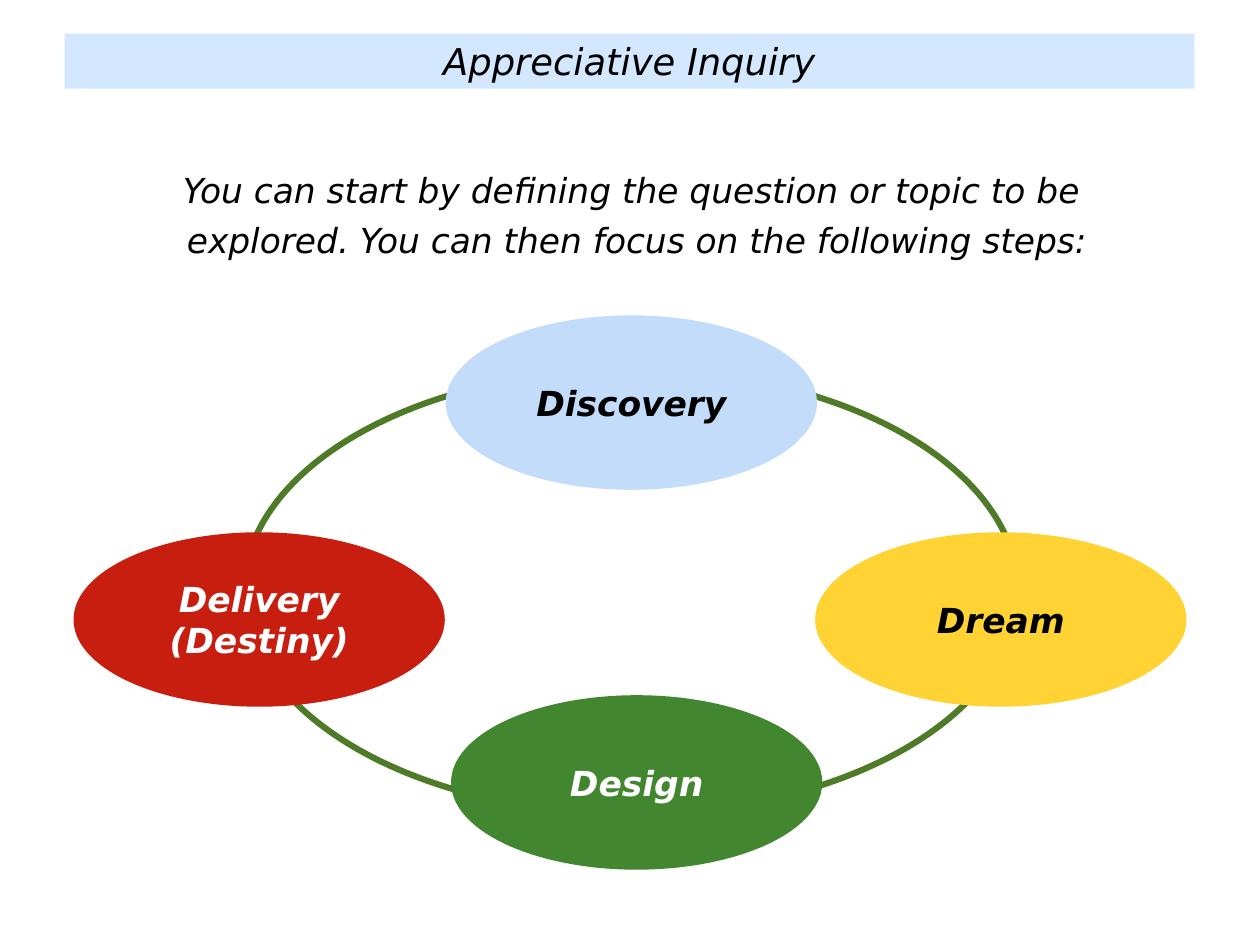
from dataclasses import dataclass

from lxml import etree
from pptx import Presentation
from pptx.dml.color import RGBColor
from pptx.enum.shapes import MSO_SHAPE
from pptx.enum.text import MSO_ANCHOR, MSO_AUTO_SIZE, PP_ALIGN
from pptx.oxml.ns import qn
from pptx.shapes.autoshape import Shape
from pptx.slide import Slide
from pptx.util import Inches, Pt

OVAL = MSO_SHAPE.OVAL
TOP = MSO_ANCHOR.TOP
MIDDLE = MSO_ANCHOR.MIDDLE
FIXED_SIZE = MSO_AUTO_SIZE.NONE
CENTER = PP_ALIGN.CENTER

SLIDE_WIDTH = Inches(14.22)
SLIDE_HEIGHT = Inches(10.67)


@dataclass(frozen=True)
class Theme:
    font: str = "DejaVu Sans"
    title_size: int = 30
    text_size: int = 28
    ring_width: int = 5
    dark: str = "000000"
    light: str = "FFFFFF"
    banner: str = "D3E8FF"
    ring: str = "4F7A28"
    discovery: str = "C3DCFA"
    dream: str = "FED333"
    design: str = "42872F"
    delivery: str = "C81E0F"


@dataclass(frozen=True)
class Area:
    """Centre and size in percent of the slide."""

    center_x: float
    center_y: float
    width: float
    height: float

    def bounds(self) -> tuple[int, int, int, int]:
        left = self.center_x - self.width / 2
        top = self.center_y - self.height / 2
        return (
            round(SLIDE_WIDTH * left / 100),
            round(SLIDE_HEIGHT * top / 100),
            round(SLIDE_WIDTH * self.width / 100),
            round(SLIDE_HEIGHT * self.height / 100),
        )


@dataclass(frozen=True)
class Step:
    label: str
    center_x: float
    center_y: float
    fill: str
    ink: str


THEME = Theme()
TITLE_AREA = Area(49.96, 6.47, 89.66, 5.81)
INTRO_AREA = Area(50.53, 21.93, 90.08, 10.5)
RING_AREA = Area(50.07, 62.61, 61.46, 47.05)
STEP_WIDTH = 29.47
STEP_HEIGHT = 18.46

TITLE = "Appreciative Inquiry"
INTRO = (
    "You can start by defining the question or topic to be \n"
    "explored. You can then focus on the following steps:"
)
STEPS = (
    Step("Discovery", 50.11, 42.6, THEME.discovery, THEME.dark),
    Step("Dream", 79.43, 65.56, THEME.dream, THEME.dark),
    Step("Design", 50.53, 82.8, THEME.design, THEME.light),
    Step("Delivery\n(Destiny)", 20.57, 65.56, THEME.delivery, THEME.light),
)


def place(box: Shape, area: Area) -> None:
    box.left, box.top, box.width, box.height = area.bounds()


def paint(box: Shape, color: str) -> None:
    box.fill.solid()
    box.fill.fore_color.rgb = RGBColor.from_string(color)


def write(box: Shape, text: str, size: int, ink: str, anchor: MSO_ANCHOR,
          inset: float, bold: bool = False, spacing: float = 1.0) -> None:
    frame = box.text_frame
    frame.text = text
    frame.word_wrap = True
    frame.auto_size = FIXED_SIZE
    frame.vertical_anchor = anchor
    frame.margin_left = frame.margin_right = Inches(inset)
    frame.margin_top = frame.margin_bottom = Inches(inset)
    for para in frame.paragraphs:
        para.alignment = CENTER
        para.line_spacing = spacing
        para.space_before = para.space_after = Pt(0)
        for span in para.runs:
            span.font.name = THEME.font
            span.font.size = Pt(size)
            span.font.bold = bold
            span.font.italic = True
            span.font.color.rgb = RGBColor.from_string(ink)


def remove_bullets(box: Shape) -> None:
    for para in box.text_frame.paragraphs:
        properties = para._p.get_or_add_pPr()
        properties.set("marL", "0")
        properties.set("indent", "0")
        etree.SubElement(properties, qn("a:buNone"))


def add_oval(page: Slide, area: Area, fill: str) -> Shape:
    oval = page.shapes.add_shape(OVAL, *area.bounds())
    oval.shadow.inherit = False
    paint(oval, fill)
    oval.line.fill.background()
    return oval


def add_ring(page: Slide) -> None:
    ring = add_oval(page, RING_AREA, THEME.light)
    ring.line.color.rgb = RGBColor.from_string(THEME.ring)
    ring.line.width = Pt(THEME.ring_width)


def add_step(page: Slide, step: Step) -> None:
    area = Area(step.center_x, step.center_y, STEP_WIDTH, STEP_HEIGHT)
    oval = add_oval(page, area, step.fill)
    write(oval, step.label, THEME.text_size, step.ink, MIDDLE, 0.06, bold=True)


def add_heading(page: Slide) -> None:
    title = page.shapes.title
    place(title, TITLE_AREA)
    paint(title, THEME.banner)
    write(title, TITLE, THEME.title_size, THEME.dark, TOP, 0.06)

    intro = page.placeholders[1]
    place(intro, INTRO_AREA)
    write(intro, INTRO, THEME.text_size, THEME.dark, TOP, 0.04, spacing=1.2)
    remove_bullets(intro)


def main() -> None:
    deck = Presentation()
    deck.slide_width = SLIDE_WIDTH
    deck.slide_height = SLIDE_HEIGHT
    page = deck.slides.add_slide(deck.slide_layouts[1])
    add_heading(page)
    add_ring(page)
    for step in STEPS:
        add_step(page, step)
    deck.save("out.pptx")


if __name__ == "__main__":
    main()
